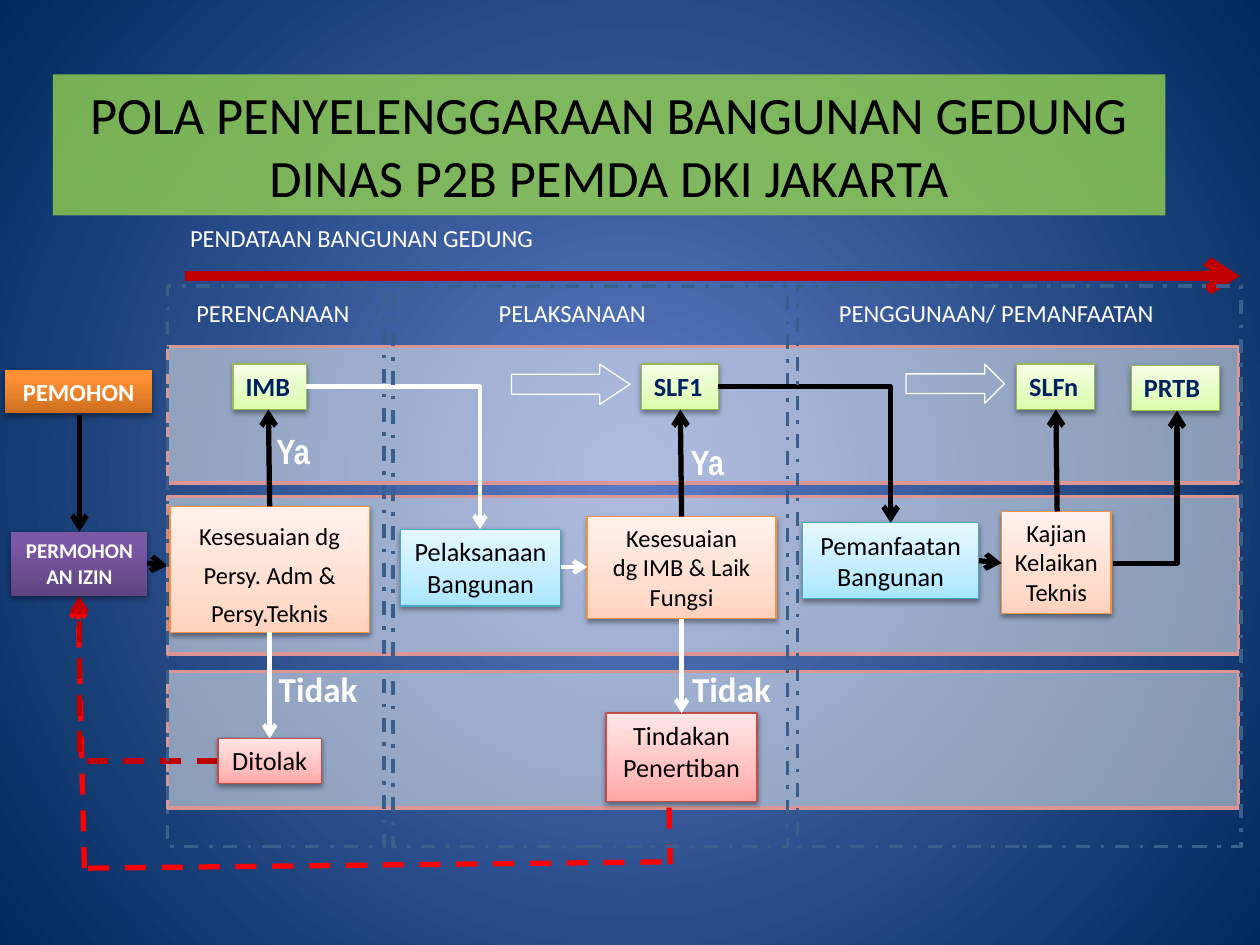
from dataclasses import dataclass
from lxml.etree import SubElement
from pptx import Presentation
from pptx.dml.color import RGBColor
from pptx.enum.dml import MSO_LINE
from pptx.enum.shapes import MSO_CONNECTOR, MSO_SHAPE
from pptx.enum.text import MSO_ANCHOR, MSO_AUTO_SIZE, PP_ALIGN
from pptx.oxml.ns import qn
from pptx.util import Pt


@dataclass(frozen=True)
class Theme:
    font: str = "Calibri"
    narrow: str = "Arial Narrow"
    title_size: int = 30
    answer_size: int = 20
    box_size: int = 15
    text_size: int = 14
    small_size: int = 12
    black: str = "000000"
    white: str = "FFFFFF"
    navy: str = "002060"
    title_fill: str = "92D050"
    band_fill: str = "FCFBF9"
    band_line: str = "D99694"
    frame: str = "3A5F8C"
    crimson: str = "C00000"
    red: str = "FF0000"
    background: tuple = ((0, "5E7CC5"), (100, "00295C"))
    # Gradient stops from the bottom up, then the outline colour
    permit: tuple = (((0, "DAFDA7"), (35, "E4FCC2"), (100, "F5FFE7")), "98B955")
    check: tuple = (((0, "FFD2BD"), (35, "FFDED0"), (100, "FFF2ED")), "F69240")
    refusal: tuple = (((0, "FFA6A5"), (35, "FFC0BF"), (100, "FFE7E7")), "BF4C48")
    activity: tuple = (((0, "A7E6FF"), (35, "C1EDFF"), (100, "E7F8FF")), "46AAC5")
    request: tuple = (((0, "5F4480"), (80, "7B58A6"), (100, "7C57A8")), None)
    applicant: tuple = (((0, "CC6E20"), (80, "FF9034"), (100, "FF9136")), None)


THEME = Theme()


@dataclass(frozen=True)
class Box:
    left: float
    top: float
    width: float
    height: float

    def inner(self, x, y, width, height):
        return Box(self.left + x, self.top + y, width, height)

    def point(self, x, y):
        return Pt(self.left + x), Pt(self.top + y)

    def lengths(self):
        return [Pt(v) for v in (self.left, self.top, self.width, self.height)]


# ---- Shared formatting ----
def put_text(shape, text, size=THEME.text_size, color=THEME.black, font=THEME.font,
             bold=False, align=PP_ALIGN.CENTER, wrap=True, spacing=None,
             anchor=MSO_ANCHOR.TOP):
    frame = shape.text_frame
    frame.auto_size = MSO_AUTO_SIZE.NONE
    frame.word_wrap = wrap
    frame.vertical_anchor = anchor
    frame.margin_left = frame.margin_right = Pt(7.2)
    frame.margin_top = frame.margin_bottom = Pt(3.6)
    frame.text = text
    for paragraph in frame.paragraphs:
        paragraph.alignment = align
        paragraph.line_spacing = spacing
        style = paragraph.runs[0].font
        style.name, style.size, style.bold = font, Pt(size), bold
        style.color.rgb = RGBColor.from_string(color)


def set_gradient(fill, owner, stops, radial=False):
    fill.gradient()
    gradient = next(owner.iter(qn("a:gradFill")))
    for child in list(gradient):
        gradient.remove(child)
    stop_list = SubElement(gradient, qn("a:gsLst"))
    for position, color in stops:
        stop = SubElement(stop_list, qn("a:gs"), pos=str(position * 1000))
        SubElement(stop, qn("a:srgbClr"), val=color)
    if radial:
        circle = SubElement(gradient, qn("a:path"), {"path": "circle"})
        SubElement(circle, qn("a:fillToRect"), dict.fromkeys("ltrb", "50000"))
    else:
        SubElement(gradient, qn("a:lin"), ang="16200000", scaled="0")


def set_solid(shape, color, opacity):
    shape.fill.solid()
    shape.fill.fore_color.rgb = RGBColor.from_string(color)
    tint = shape.element.spPr.find(qn("a:solidFill")).find(qn("a:srgbClr"))
    SubElement(tint, qn("a:alpha"), val=str(opacity * 1000))


def set_line(line, color, width, dash=None):
    line.color.rgb = RGBColor.from_string(color)
    line.width = Pt(width)
    if dash:
        line.dash_style = dash


def outline(slide, box, color, width, kind=MSO_SHAPE.RECTANGLE, dash=None):
    shape = slide.shapes.add_shape(kind, *box.lengths())
    shape.shadow.inherit = False
    shape.fill.background()
    set_line(shape.line, color, width, dash)
    return shape


def card(slide, box, text, look, **text_format):
    stops, edge = look
    shape = slide.shapes.add_shape(MSO_SHAPE.RECTANGLE, *box.lengths())
    set_gradient(shape.fill, shape.element.spPr, stops)
    if edge:
        set_line(shape.line, edge, 0.75)
    else:
        shape.line.fill.background()
    shape.shadow.inherit = False
    effects = shape.element.spPr.find(qn("a:effectLst"))
    shadow = SubElement(effects, qn("a:outerShdw"), blurRad=str(Pt(3.1)),
                        dist=str(Pt(1.6)), dir="5400000", rotWithShape="0")
    tint = SubElement(shadow, qn("a:srgbClr"), val=THEME.black)
    SubElement(tint, qn("a:alpha"), val="38000")
    put_text(shape, text, **text_format)


def permit(slide, box, text, wrap=False):
    card(slide, box, text, THEME.permit, size=THEME.box_size, color=THEME.navy,
         bold=True, align=PP_ALIGN.LEFT, wrap=wrap)


def label(slide, box, text, **text_format):
    area = slide.shapes.add_textbox(*box.lengths())
    put_text(area, text, **{"color": THEME.white, "wrap": False, **text_format})


def answer(slide, box, text, font=THEME.font):
    label(slide, box, text, size=THEME.answer_size, bold=True, font=font)


def connect(slide, box, start, end, color=THEME.black, width=3, dash=None,
            arrow=True, bent=False):
    link = slide.shapes.add_connector(
        MSO_CONNECTOR.ELBOW if bent else MSO_CONNECTOR.STRAIGHT,
        *box.point(*start), *box.point(*end))
    properties = link.element.spPr
    if bent:  # one corner, leaving horizontally
        properties.find(qn("a:prstGeom")).set("prst", "bentConnector2")
    set_line(link.line, color, width, dash)
    if arrow:
        SubElement(properties.find(qn("a:ln")), qn("a:tailEnd"), type="arrow")
    SubElement(properties, qn("a:effectLst"))


# ---- Regions ----
def title_banner(slide, box):
    title = slide.shapes.title
    title.left, title.top, title.width, title.height = box.lengths()
    set_solid(title, THEME.title_fill, 80)
    put_text(title, "POLA PENYELENGGARAAN BANGUNAN GEDUNG\nDINAS P2B PEMDA DKI JAKARTA",
             size=THEME.title_size, anchor=MSO_ANCHOR.MIDDLE)


def bands(slide, box):
    for top, height in ((0, 78), (85.7, 90), (185.8, 78)):
        band = outline(slide, box.inner(0, top, box.width, height), THEME.band_line, 2)
        set_solid(band, THEME.band_fill, 50)


def timeline(slide, box):
    label(slide, box.inner(0, 0, 212.4, 24.5), "PENDATAAN BANGUNAN GEDUNG", align=PP_ALIGN.LEFT)
    connect(slide, box, (4.3, 33.9), (box.width, 33.9), THEME.crimson, 6)


def phase_frame(slide, box, heading, x, width):
    outline(slide, box, THEME.frame, 2, dash=MSO_LINE.DASH_DOT)
    label(slide, box.inner(x, 3.6, width, 24.5), heading, align=PP_ALIGN.LEFT)


def planning(slide, box):
    phase_frame(slide, box, "PERENCANAAN", 9.3, 103)
    permit(slide, box.inner(37.4, 44.7, 41.8, 25.9), "IMB")
    card(slide, box.inner(1.4, 126, 113.8, 72), "Kesesuaian dg\nPersy. Adm & Persy.Teknis",
         THEME.check, spacing=1.3)
    card(slide, box.inner(28.8, 258.5, 59, 25.9), "Ditolak", THEME.refusal,
         size=THEME.box_size, wrap=False)
    answer(slide, box.inner(54, 78.5, 35.3, 31.7), "Ya", THEME.narrow)
    answer(slide, box.inner(55.4, 214.6, 61.2, 31.7), "Tidak")
    connect(slide, box, (58.3, 126), (57.6, 70.6))
    connect(slide, box, (58.3, 198), (58.3, 258.5), THEME.white, 2.5)
    connect(slide, box, (79, 57.6), (178.5, 139), THEME.white, 2.5, bent=True)


def construction(slide, box):
    phase_frame(slide, box, "PELAKSANAAN", 53.3, 99.4)
    outline(slide, box.inner(67.7, 44.7, 67.7, 23), THEME.white, 0.75,
            MSO_SHAPE.RIGHT_ARROW).adjustments[1] = 0.75
    permit(slide, box.inner(141.9, 44.7, 43.9, 25.9), "SLF1")
    card(slide, box.inner(4.4, 139, 91.4, 43.9), "Pelaksanaan\nBangunan", THEME.activity,
         size=THEME.box_size, wrap=False)
    card(slide, box.inner(110.9, 131.8, 108, 58.3), "Kesesuaian\ndg IMB & Laik Fungsi",
         THEME.check)
    card(slide, box.inner(121.7, 244.1, 86.4, 50.4), "Tindakan\nPenertiban", THEME.refusal,
         size=THEME.box_size)
    answer(slide, box.inner(162, 85, 35.3, 31.7), "Ya", THEME.narrow)
    answer(slide, box.inner(162.8, 214.6, 61.2, 31.7), "Tidak")
    connect(slide, box, (164.9, 131.8), (164.2, 70.6))
    connect(slide, box, (164.9, 190.1), (164.9, 244.1), THEME.white, 2.5)
    connect(slide, box, (95.8, 160.6), (110.9, 160.6), THEME.white, 2.5)
    connect(slide, box, (185.8, 57.6), (284.4, 135.4), bent=True)


def occupancy(slide, box):
    phase_frame(slide, box, "PENGGUNAAN/ PEMANFAATAN", 16.5, 219.6)
    outline(slide, box.inner(61.9, 44.7, 56.2, 22.3), THEME.white, 0.75, MSO_SHAPE.RIGHT_ARROW)
    permit(slide, box.inner(125.2, 44.7, 44.6, 25.9), "SLFn")
    permit(slide, box.inner(190.8, 45.4, 50.4, 25.9), "PRTB", wrap=True)
    card(slide, box.inner(2.8, 135.4, 100.8, 43.2), "Pemanfaatan\nBangunan", THEME.activity,
         size=THEME.box_size)
    card(slide, box.inner(116.6, 128.9, 62.6, 58.3), "Kajian Kelaikan Teknis", THEME.check)
    connect(slide, box, (148.3, 128.9), (147.6, 70.6))
    connect(slide, box, (103.6, 157), (116.6, 158.4))
    connect(slide, box, (180, 158.4), (216.7, 71.3), bent=True)


def application(slide, box):
    card(slide, box.inner(0, 0, 84.2, 24.5), "PEMOHON", THEME.applicant,
         color=THEME.white, bold=True)
    card(slide, box.inner(3.6, 92.1, 77.8, 36.7), "PERMOHONAN IZIN", THEME.request,
         size=THEME.small_size, color=THEME.white, bold=True)
    connect(slide, box, (42.5, 25.2), (42.5, 92.1))
    connect(slide, box, (81.3, 110.1), (92.9, 111.6))


def resubmission(slide, box):
    dashed = {"color": THEME.red, "dash": MSO_LINE.DASH}
    connect(slide, box, (337.7, 120.9), (338.4, 153.3), arrow=False, **dashed)
    connect(slide, box, (5.8, 155.5), (337.7, 151.9), arrow=False, **dashed)
    connect(slide, box, (3.6, 155.5), (0, 2.8), **dashed)
    connect(slide, box, (80, 94.3), (0.8, 0), THEME.crimson, dash=MSO_LINE.DASH, bent=True)


def main():
    deck = Presentation()
    deck.slide_width, deck.slide_height = Pt(720), Pt(540)
    slide = deck.slides.add_slide(deck.slide_layouts[5])
    set_gradient(slide.background.fill, slide.element, THEME.background, radial=True)
    title_banner(slide, Box(30.2, 42.5, 635.8, 80.6))
    bands(slide, Box(95.8, 198, 612, 263.8))
    timeline(slide, Box(101.5, 123.8, 607, 40))
    resubmission(slide, Box(44.6, 340.6, 338.4, 155.5))
    application(slide, Box(2.9, 211.7, 84.2, 128.8))
    planning(slide, Box(95.8, 163.4, 123.8, 320.4))
    construction(slide, Box(224.6, 163.4, 225.4, 320.4))
    occupancy(slide, Box(455.8, 163.4, 253.4, 320.4))
    deck.save("out.pptx")


if __name__ == "__main__":
    main()
